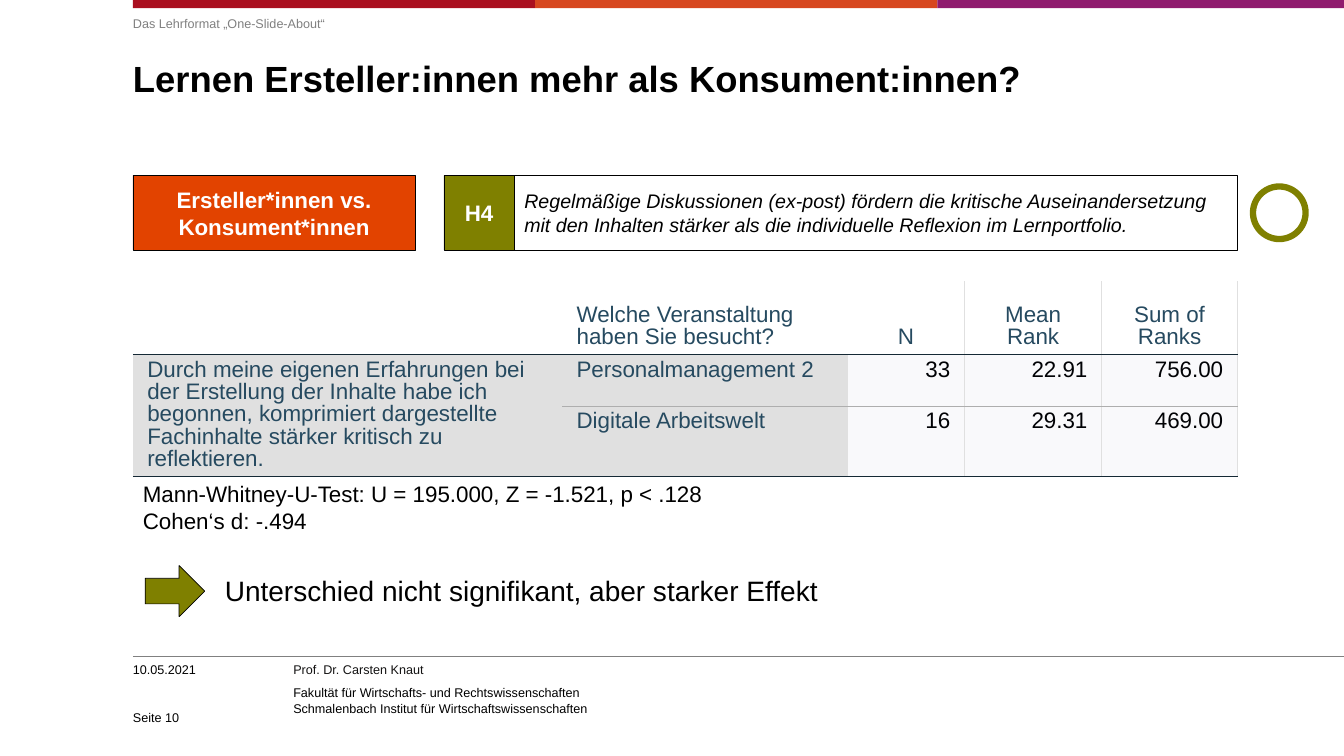
from lxml import etree
from pptx import Presentation
from pptx.dml.color import RGBColor
from pptx.enum.shapes import MSO_CONNECTOR, MSO_SHAPE as SHAPE
from pptx.enum.text import MSO_ANCHOR as ANCHOR, PP_ALIGN as ALIGN
from pptx.oxml.ns import qn
from pptx.util import Pt

FONT = "Arial"
BLACK, WHITE, GREY, OLIVE, ORANGE = "000000", "FFFFFF", "808080", "7F8000", "E24300"
LABEL, NUMBER, DARK, MID, LIGHT = "264A60", "010205", "152935", "AEAEAE", "E0E0E0"
LEFT, WIDTH, HEIGHT = 95, 960, 540
BOX_TOP, BOX_HEIGHT = 125.3, 53.3

# left, width, colour
BANDS = [(95, 287.3, "AA0F1F"), (382.3, 287.3, "D7471F"), (669.6, 290.4, "901B6E")]

# position, paragraphs, format, space after each paragraph
PLAIN_TEXTS = [
    ((LEFT, 41, 850, 70), ["Lernen Ersteller:innen mehr als Konsument:innen?"],
     dict(size=26, bold=True, spacing=30), 0),
    ((LEFT, 11.5, 850, 17), ["Das Lehrformat „One-Slide-About“"],
     dict(size=9, color=GREY), 0),
    ((LEFT, 473, 102, 14.4), ["10.05.2021"], dict(size=9), 0),
    ((LEFT, 501, 102, 16.6), ["Seite 10"], dict(size=9, anchor=ANCHOR.BOTTOM), 0),
    ((209.5, 473, 310, 14), ["Prof. Dr. Carsten Knaut"], dict(size=9, color="141313"), 0),
    ((209.5, 489.5, 310, 28),
     ["Fakultät für Wirtschafts- und Rechtswissenschaften",
      "Schmalenbach Institut für Wirtschaftswissenschaften"], dict(size=9), 0),
]
PADDED_TEXTS = [
    ((LEFT, 339.4, 440, 46),
     ["Mann-Whitney-U-Test: U = 195.000, Z = -1.521, p < .128", "Cohen‘s d: -.494"],
     dict(size=16)),
    ((153.5, 406.4, 451, 31.5), ["Unterschied nicht signifikant, aber starker Effekt"],
     dict(size=20)),
]

# left, width, fill, text, format
HEADING = dict(size=16, color=WHITE, bold=True, align=ALIGN.CENTER, anchor=ANCHOR.MIDDLE)
BOXES = [
    (LEFT, 201.6, ORANGE, "Ersteller*innen vs. Konsument*innen", HEADING),
    (367.4, 516.6, WHITE,
     "Regelmäßige Diskussionen (ex-post) fördern die kritische Auseinandersetzung "
     "mit den Inhalten stärker als die individuelle Reflexion im Lernportfolio.",
     dict(size=14, italic=True, anchor=ANCHOR.MIDDLE)),
    (317.1, 50.3, OLIVE, "H4", HEADING),
]

TABLE_TOP = 200.8
COLUMNS = [306.7, 203.8, 83.5, 98, 97]
ROWS = [52.3, 37, 50]
CELLS = [
    ["", "Welche Veranstaltung haben Sie besucht?", "N", "Mean Rank", "Sum of Ranks"],
    ["Durch meine eigenen Erfahrungen bei der Erstellung der Inhalte habe ich begonnen, "
     "komprimiert dargestellte Fachinhalte stärker kritisch zu reflektieren.",
     "Personalmanagement 2", "33", "22.91", "756.00"],
    ["", "Digitale Arbeitswelt", "16", "29.31", "469.00"],
]
NO_STYLE = "{2D5ABB26-0587-4C30-8999-92F81FD0307C}"


def rgb(value):
    return RGBColor.from_string(value)


def points(*values):
    return [Pt(v) for v in values]


def write(tf, texts, size, color=BLACK, bold=False, italic=False,
          align=ALIGN.LEFT, anchor=ANCHOR.TOP, spacing=None, after=0):
    tf.word_wrap = True
    tf.vertical_anchor = anchor
    for i, text in enumerate(texts):
        p = tf.add_paragraph() if i else tf.paragraphs[0]
        p.alignment, p.space_after = align, Pt(after)
        if spacing:
            p.line_spacing = Pt(spacing)
        r = p.add_run()
        r.text = text
        r.font.color.rgb = rgb(color)
        for name, value in dict(name=FONT, size=Pt(size), bold=bold, italic=italic).items():
            setattr(r.font, name, value)


def add_text(s, place, texts, fmt, inset=None, after=0):
    tf = s.shapes.add_textbox(*points(*place)).text_frame
    if inset is not None:
        for side in ("left", "top", "right", "bottom"):
            setattr(tf, f"margin_{side}", Pt(inset))
    write(tf, texts, after=after, **fmt)


def add_shape(s, kind, place, fill, line=None, width=0.5):
    sp = s.shapes.add_shape(kind, *points(*place))
    sp.shadow.inherit = False
    sp.fill.solid()
    sp.fill.fore_color.rgb = rgb(fill)
    if line:
        sp.line.color.rgb = rgb(line)
        sp.line.width = Pt(width)
    else:
        sp.line.fill.background()
    return sp


def add_borders(cell, borders):
    """Draw 1 pt borders; borders maps side letters L, R, T, B to colours."""
    tcPr = cell._tc.get_or_add_tcPr()
    for side in "LRTB":
        if side in borders:
            ln = etree.SubElement(tcPr, qn(f"a:ln{side}"), w=str(Pt(1)))
            fill = etree.SubElement(ln, qn("a:solidFill"))
            etree.SubElement(fill, qn("a:srgbClr"), val=borders[side])


def format_cell(cell, row, col, text):
    edges = [None, DARK, MID if col else DARK, DARK]
    borders = {"T": edges[row], "B": edges[row + 1]}
    if col >= 2:
        borders["R"] = LIGHT
    if col >= 3:
        borders["L"] = LIGHT
    add_borders(cell, {side: color for side, color in borders.items() if color})
    cell.fill.solid()
    cell.fill.fore_color.rgb = rgb(WHITE if row == 0 else LIGHT if col < 2 else "F9F9FB")
    numeric = col >= 2
    align = ALIGN.LEFT if not numeric else ALIGN.RIGHT if row else ALIGN.CENTER
    write(cell.text_frame, [text], 16, NUMBER if numeric and row else LABEL,
          align=align, spacing=16)
    cell.vertical_anchor = ANCHOR.TOP if row else ANCHOR.BOTTOM
    pPr = cell.text_frame.paragraphs[0]._p.get_or_add_pPr()
    for margin in ("marL", "marR"):
        pPr.set(margin, str(Pt(3)))


def add_rank_table(s):
    place = points(LEFT, TABLE_TOP, sum(COLUMNS), sum(ROWS))
    table = s.shapes.add_table(len(ROWS), len(COLUMNS), *place).table
    table.first_row = table.horz_banding = False
    table._tbl.tblPr.find(qn("a:tableStyleId")).text = NO_STYLE
    for column, width in zip(table.columns, COLUMNS):
        column.width = Pt(width)
    for row, height in zip(table.rows, ROWS):
        row.height = Pt(height)
    table.cell(1, 0).merge(table.cell(2, 0))
    for i, texts in enumerate(CELLS):
        for j, text in enumerate(texts):
            format_cell(table.cell(i, j), i, j, text)


def main():
    prs = Presentation()
    prs.slide_width, prs.slide_height = points(WIDTH, HEIGHT)
    s = prs.slides.add_slide(prs.slide_layouts[6])

    for left, width, color in BANDS:
        add_shape(s, SHAPE.RECTANGLE, (left, 0, width, 5.8), color)
    rule = s.shapes.add_connector(MSO_CONNECTOR.STRAIGHT, *points(LEFT, 468.7, WIDTH, 468.7))
    rule.line.color.rgb = rgb(GREY)
    rule.line.width = Pt(0.5)
    etree.SubElement(rule._element.spPr, qn("a:effectLst"))

    for place, texts, fmt, after in PLAIN_TEXTS:
        add_text(s, place, texts, fmt, inset=0, after=after)
    for left, width, fill, text, fmt in BOXES:
        place = (left, BOX_TOP, width, BOX_HEIGHT)
        write(add_shape(s, SHAPE.RECTANGLE, place, fill, BLACK).text_frame, [text], **fmt)
    add_rank_table(s)
    add_shape(s, SHAPE.OVAL, (895, 133.2, 37.6, 37.6), WHITE, OLIVE, 4.5)
    add_shape(s, SHAPE.RIGHT_ARROW, (103.7, 404, 42.5, 36.5), OLIVE, BLACK)
    for place, texts, fmt in PADDED_TEXTS:
        add_text(s, place, texts, fmt)

    prs.save("out.pptx")


if __name__ == "__main__":
    main()
